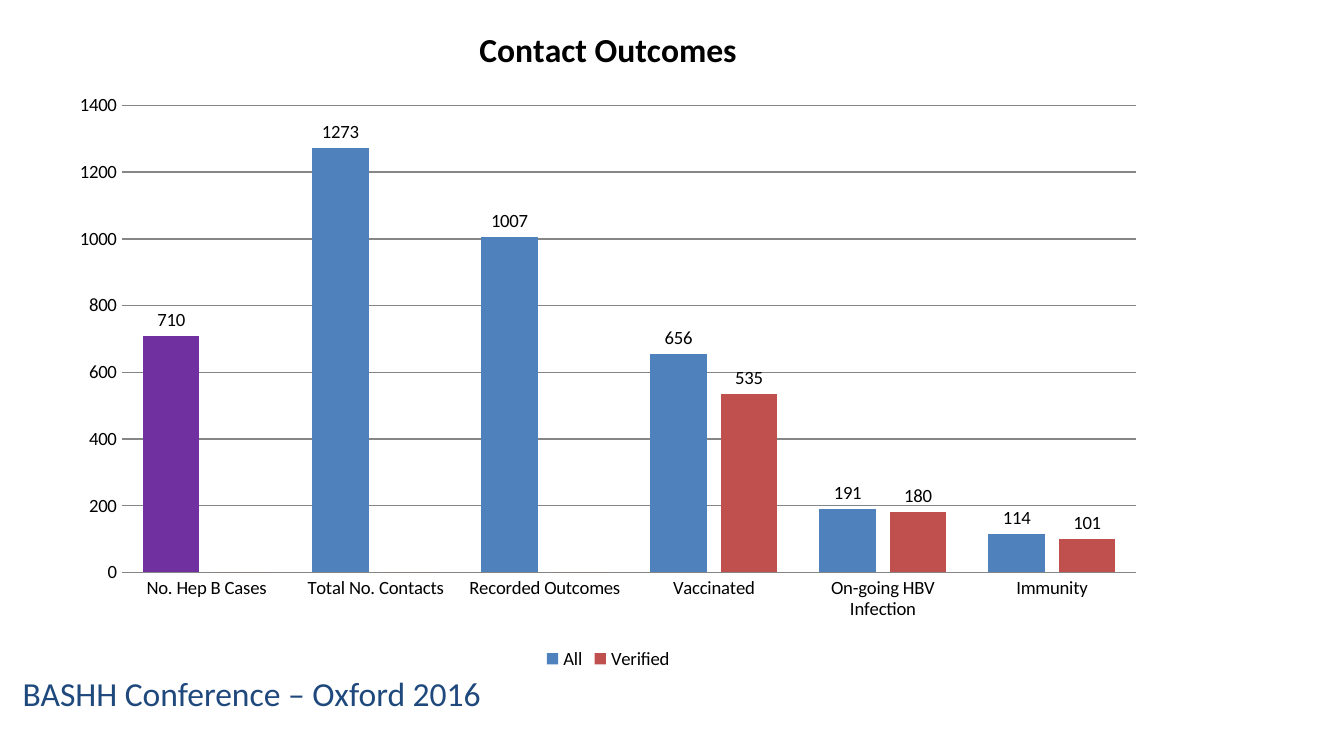
from lxml import etree
from pptx import Presentation
from pptx.chart.data import CategoryChartData
from pptx.dml.color import RGBColor
from pptx.enum.chart import (XL_CHART_TYPE, XL_LABEL_POSITION as LabelPos,
                             XL_LEGEND_POSITION as LegendPos, XL_TICK_MARK as Tick)
from pptx.oxml.ns import qn
from pptx.util import Inches, Pt

FONT = "Calibri"
GRID = "868686"
CATEGORIES = ["No. Hep B Cases", "Total No. Contacts", "Recorded Outcomes",
              "Vaccinated", "On-going HBV Infection", "Immunity"]
SERIES = {
    "All": ("4F81BD", [710, 1273, 1007, 656, 191, 114]),
    "Verified": ("C0504D", [0, 0, 0, 535, 180, 101]),
}


def rgb(value):
    return RGBColor.from_string(value)


def style_font(font, size, color="000000", bold=False):
    font.name, font.size, font.bold = FONT, Pt(size), bold
    font.color.rgb = rgb(color)


def fill_solid(fill, color):
    fill.solid()
    fill.fore_color.rgb = rgb(color)


def write_text(tf, text, **fmt):
    p = tf.paragraphs[0]
    r = p.add_run()
    r.text = text
    for font in (p.font, r.font):
        style_font(font, **fmt)


def hide_label(labels, idx):
    label = etree.Element(qn("c:dLbl"))
    etree.SubElement(label, qn("c:idx")).set("val", str(idx))
    etree.SubElement(label, qn("c:delete")).set("val", "1")
    labels._element.insert(idx, label)


def add_outcomes_chart(slide, box):
    data = CategoryChartData()
    data.categories = CATEGORIES
    for name, (_, values) in SERIES.items():
        data.add_series(name, values)
    chart = slide.shapes.add_chart(
        XL_CHART_TYPE.COLUMN_CLUSTERED, *map(Inches, box), data).chart
    style_font(chart.font, 10)

    # Title and legend
    chart.has_title = True
    write_text(chart.chart_title.text_frame, "Contact Outcomes", size=18, bold=True)
    chart.chart_title.include_in_layout = False
    chart.has_legend = True
    chart.legend.position = LegendPos.BOTTOM
    chart.legend.include_in_layout = False

    # Axes
    for axis in (chart.category_axis, chart.value_axis):
        axis.major_tick_mark = axis.minor_tick_mark = Tick.NONE
    chart.category_axis.format.line.color.rgb = rgb(GRID)
    value_axis = chart.value_axis
    value_axis.minimum_scale, value_axis.maximum_scale = 0, 1400
    value_axis.major_unit = 200
    value_axis.format.line.fill.background()
    value_axis.has_major_gridlines = True
    value_axis.major_gridlines.format.line.color.rgb = rgb(GRID)

    # Columns, with no label where the value is zero
    plot = chart.plots[0]
    plot.gap_width, plot.overlap = 75, -25
    plot.vary_by_categories = False
    for series in plot.series:
        color, values = SERIES[series.name]
        fill_solid(series.format.fill, color)
        series.invert_if_negative = False
        labels = series.data_labels
        labels.show_value = True
        labels.position = LabelPos.OUTSIDE_END
        for idx, value in enumerate(values):
            if value == 0:
                hide_label(labels, idx)
    # The case count stands apart from the contacts
    fill_solid(plot.series[0].points[0].format.fill, "7030A0")


def add_footer(slide, box):
    tf = slide.shapes.add_textbox(*map(Inches, box)).text_frame
    tf.word_wrap = True
    write_text(tf, "BASHH Conference – Oxford 2016", size=18, color="1F497D")


def main():
    prs = Presentation()
    prs.slide_width = Inches(10)
    prs.slide_height = prs.slide_width * 9 // 16
    slide = prs.slides.add_slide(prs.slide_layouts[6])
    add_footer(slide, (0.07, 4.96, 4.78, 0.69))
    add_outcomes_chart(slide, (0.43, 0, 8.19, 5.02))
    prs.save("out.pptx")


if __name__ == "__main__":
    main()
